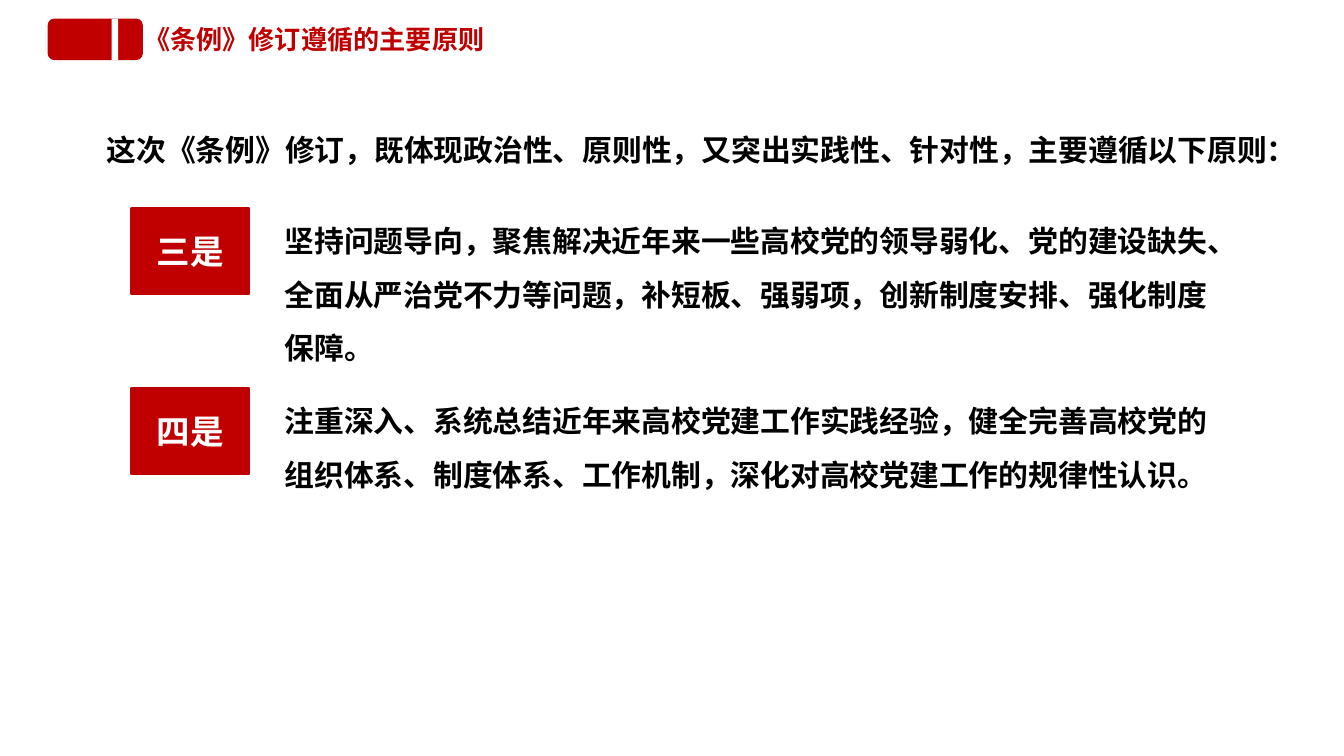
"""Build a slide on the guiding principles of the revised regulations."""
from dataclasses import dataclass

from lxml import etree
from pptx import Presentation
from pptx.dml.color import RGBColor
from pptx.enum.shapes import MSO_SHAPE
from pptx.enum.text import MSO_ANCHOR, PP_ALIGN
from pptx.oxml.ns import qn
from pptx.shapes.autoshape import Shape
from pptx.slide import Slide
from pptx.util import Inches, Pt

RECTANGLE = MSO_SHAPE.RECTANGLE
ROUNDED = MSO_SHAPE.ROUNDED_RECTANGLE
LEFT, CENTER = PP_ALIGN.LEFT, PP_ALIGN.CENTER
MIDDLE = MSO_ANCHOR.MIDDLE
SLIDE_WIDTH = Inches(10)
SLIDE_HEIGHT = SLIDE_WIDTH * 9 // 16


@dataclass(frozen=True)
class Theme:
    """Colours, font and type sizes of the slide."""
    red: RGBColor = RGBColor(0xC0, 0x00, 0x00)
    white: RGBColor = RGBColor(0xFF, 0xFF, 0xFF)
    black: RGBColor = RGBColor(0x00, 0x00, 0x00)
    font: str = "Noto Sans CJK SC"
    heading: int = 14
    body: int = 16
    label: int = 18
    border: int = 2
    body_spacing: float = 1.5


@dataclass(frozen=True)
class Box:
    """An area in percent of the slide's width and height."""
    left: float
    top: float
    width: float
    height: float

    def emu(self) -> tuple[int, int, int, int]:
        """Return left, top, width and height in slide units."""
        return (int(SLIDE_WIDTH * self.left / 100), int(SLIDE_HEIGHT * self.top / 100),
                int(SLIDE_WIDTH * self.width / 100), int(SLIDE_HEIGHT * self.height / 100))


@dataclass(frozen=True)
class Principle:
    """A numbered principle and the height of its explanation."""
    label: str
    explanation: str
    height: float


THEME = Theme()
FIRST_ROW, ROW_STEP, LABEL_DROP = 26.2, 23.8, 1.42
PRINCIPLES = (
    Principle("三是", "坚持问题导向，聚焦解决近年来一些高校党的领导弱化、党的建设缺失、"
              "全面从严治党不力等问题，补短板、强弱项，创新制度安排、强化制度保障。", 23.29),
    Principle("四是", "注重深入、系统总结近年来高校党建工作实践经验，健全完善高校党的"
              "组织体系、制度体系、工作机制，深化对高校党建工作的规律性认识。", 15.29),
)


def write(shape: Shape, words: str, size: int, color: RGBColor,
          align: PP_ALIGN = LEFT, spacing: float = 1.0) -> None:
    """Put one bold paragraph into a shape."""
    shape.text_frame.text = words
    paragraph = shape.text_frame.paragraphs[0]
    paragraph.alignment = align
    paragraph.line_spacing = spacing
    font = paragraph.runs[0].font
    font.size, font.bold, font.name = Pt(size), True, THEME.font
    font.color.rgb = color
    east_asian = etree.SubElement(paragraph.runs[0]._r.get_or_add_rPr(), qn("a:ea"))
    east_asian.set("typeface", THEME.font)


def add_block(slide: Slide, kind: MSO_SHAPE, box: Box, color: RGBColor) -> Shape:
    """Draw a flat filled shape without an outline."""
    block = slide.shapes.add_shape(kind, *box.emu())
    block.shadow.inherit = False
    block.fill.solid()
    block.fill.fore_color.rgb = color
    block.line.fill.background()
    return block


def add_words(slide: Slide, box: Box, words: str, size: int, color: RGBColor,
              align: PP_ALIGN = LEFT, spacing: float = 1.0, wrap: bool = True) -> None:
    """Draw a text box with one paragraph."""
    words_box = slide.shapes.add_textbox(*box.emu())
    words_box.text_frame.word_wrap = wrap
    write(words_box, words, size, color, align, spacing)


def add_principle(slide: Slide, row: int, principle: Principle) -> None:
    """Draw a principle's explanation and its red label."""
    top = FIRST_ROW + row * ROW_STEP
    add_words(slide, Box(20.2, top, 72.4, principle.height), principle.explanation,
              THEME.body, THEME.black, spacing=THEME.body_spacing)
    label = add_block(slide, RECTANGLE, Box(9.8, top + LABEL_DROP, 8.7, 11.2), THEME.red)
    label.line.color.rgb = THEME.red
    label.line.width = Pt(THEME.border)
    label.text_frame.vertical_anchor = MIDDLE
    write(label, principle.label, THEME.label, THEME.white, CENTER)


def main() -> None:
    """Build and save the slide."""
    deck = Presentation()
    deck.slide_width, deck.slide_height = SLIDE_WIDTH, SLIDE_HEIGHT
    slide = deck.slides.add_slide(deck.slide_layouts[6])
    add_block(slide, ROUNDED, Box(3.54, 2.45, 7.1, 5.51), THEME.red)
    add_block(slide, RECTANGLE, Box(8.3, 2.45, 0.5, 5.51), THEME.white)
    add_words(slide, Box(9.64, 2.2, 27.5, 6.04), "《条例》修订遵循的主要原则",
              THEME.heading, THEME.red, CENTER, wrap=False)
    add_words(slide, Box(6.94, 16.53, 89.8, 6.58),
              "这次《条例》修订，既体现政治性、原则性，又突出实践性、针对性，主要遵循以下原则：",
              THEME.body, THEME.black)
    for row, principle in enumerate(PRINCIPLES):
        add_principle(slide, row, principle)
    deck.save("out.pptx")


if __name__ == "__main__":
    main()
